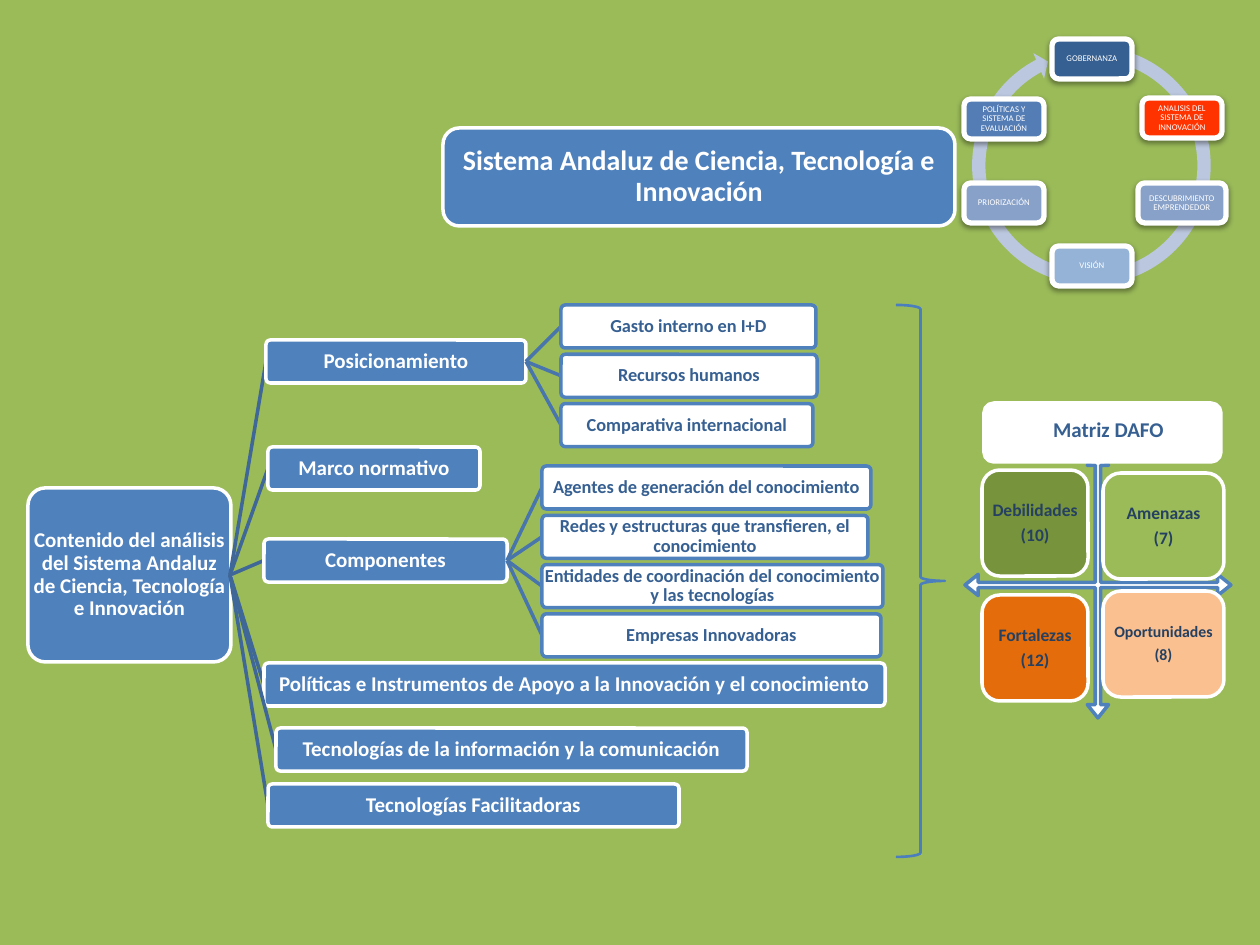
"""Build the slide on the analysis of the Andalusian innovation system."""
from dataclasses import dataclass

from lxml.etree import SubElement
from pptx import Presentation
from pptx.dml.color import RGBColor
from pptx.enum.shapes import MSO_CONNECTOR, MSO_SHAPE
from pptx.enum.text import MSO_ANCHOR, MSO_AUTO_SIZE, PP_ALIGN
from pptx.oxml.ns import qn
from pptx.util import Pt


@dataclass(frozen=True)
class Theme:
    font: str = "Calibri"
    ground: str = "9BBB59"
    white: str = "FFFFFF"
    blue: str = "4F81BD"
    navy: str = "376092"
    ink: str = "254061"
    ring: str = "BBC7DE"
    trunk: str = "3F6797"
    twig: str = "4875AC"
    brace: str = "4B7EBC"
    title: float = 16
    branch: float = 12
    leaf: float = 10.5
    cell: float = 10
    node: float = 5


T = Theme()
SCALE = 914400 / 126
ROW_H, LEAF_STEP = 43, 49.3

TITLE = "Sistema Andaluz de Ciencia, Tecnología e Innovación"
TITLE_BOX = (443, 128, 512, 98)
ROOT = "Contenido del análisis del Sistema Andaluz de Ciencia, Tecnología e Innovación"
ROOT_BOX = (28, 488, 203, 174)

CYCLE = [
    ("GOBERNANZA", 1052, 39, 80, T.navy),
    ("ANALISIS DEL SISTEMA DE INNOVACIÓN", 1142, 98, 80, "FF3300"),
    ("DESCUBRIMIENTO EMPRENDEDOR", 1138, 183, 88, "88A1C9"),
    ("VISIÓN", 1052, 246, 80, "95B3D7"),
    ("PRIORIZACIÓN", 964, 183, 80, "88A1C9"),
    ("POLÍTICAS Y SISTEMA DE EVALUACIÓN", 964, 99, 80, "547DB6"),
]

BRANCHES = [
    ("Posicionamiento", 266, 340, 260, (561, 305), [
        ("Gasto interno en I+D", 255),
        ("Recursos humanos", 256),
        ("Comparativa internacional", 252)]),
    ("Marco normativo", 268, 447, 212, None, []),
    ("Componentes", 264, 539, 243, (542, 466), [
        ("Agentes de generación del conocimiento", 329),
        ("Redes y estructuras que transfieren, el conocimiento", 326),
        ("Entidades de coordinación del conocimiento y las tecnologías", 341),
        ("Empresas Innovadoras", 339)]),
    ("Políticas e Instrumentos de Apoyo a la Innovación y el conocimiento",
     264, 663, 621, None, []),
    ("Tecnologías de la información y la comunicación", 276, 728, 471, None, []),
    ("Tecnologías Facilitadoras", 268, 784, 411, None, []),
]

DAFO = [
    ("Debilidades\n(10)", 982, 470, 106, "77933C", T.cell),
    ("Amenazas\n(7)", 1103, 473, 121, T.ground, T.cell),
    ("Fortalezas\n(12)", 982, 595, 106, "E46C0A", T.cell),
    ("Oportunidades\n(8)", 1103, 591, 121, "FAC090", 9),
]


def px(*values):
    return [round(v * SCALE) for v in values]


def rgb(code):
    return RGBColor.from_string(code)


def write(sp, text, size=T.branch, color=T.white, bold=True, inset=0):
    tf = sp.text_frame
    tf.word_wrap = True
    tf.auto_size = MSO_AUTO_SIZE.NONE
    tf.vertical_anchor = MSO_ANCHOR.MIDDLE
    tf.margin_left = tf.margin_right = tf.margin_top = tf.margin_bottom = px(inset)[0]
    tf.text = text
    for p in tf.paragraphs:
        p.alignment = PP_ALIGN.CENTER
        p.line_spacing = 0.9
        p.space_before = Pt(0)
        p.space_after = Pt(size * 0.35)
        for r in p.runs:
            r.font.name, r.font.size, r.font.bold = T.font, Pt(size), bold
            r.font.color.rgb = rgb(color)


def draw(s, kind, box, fill=None, line=None, width=2, adj=()):
    sp = s.shapes.add_shape(kind, *px(*box))
    sp.shadow.inherit = False
    for i, value in enumerate(adj):
        sp.adjustments[i] = value
    if fill:
        sp.fill.solid()
        sp.fill.fore_color.rgb = rgb(fill)
    else:
        sp.fill.background()
    if line:
        sp.line.color.rgb = rgb(line)
        sp.line.width = Pt(width)
    else:
        sp.line.fill.background()
    return sp


def rounded(s, box, fill, line=T.white, width=2, adj=()):
    return draw(s, MSO_SHAPE.ROUNDED_RECTANGLE, box, fill, line, width, adj)


def link(s, start, end, color):
    c = s.shapes.add_connector(MSO_CONNECTOR.STRAIGHT, *px(*start, *end))
    c.line.color.rgb = rgb(color)
    c.line.width = Pt(2)
    SubElement(c._element.spPr, qn("a:effectLst"))


def cast_shadow(sp):
    effects = sp._element.spPr.find(qn("a:effectLst"))
    outer = SubElement(effects, qn("a:outerShdw"), blurRad=str(Pt(3.1)),
                       dist=str(Pt(1.6)), dir="5400000", rotWithShape="0")
    color = SubElement(outer, qn("a:srgbClr"), val="000000")
    SubElement(color, qn("a:alpha"), val="38000")


def add_cycle(s):
    draw(s, MSO_SHAPE.CIRCULAR_ARROW, (965, 39, 253, 253), T.ring,
         adj=(0.05274, 3.126, 145.257, 169.549, 0.05477))
    for text, x, y, w, fill in CYCLE:
        sp = rounded(s, (x, y, w, 40), fill, width=3)
        cast_shadow(sp)
        write(sp, text, size=T.node, bold=False, inset=2)


def add_title(s):
    rounded(s, TITLE_BOX, T.blue)
    title = s.shapes.title
    title.left, title.top, title.width, title.height = px(*TITLE_BOX)
    write(title, TITLE, size=T.title, inset=14)
    s.shapes._spTree.append(title._element)


def add_tree(s):
    x, y, w, h = ROOT_BOX
    write(rounded(s, ROOT_BOX, T.blue, adj=[0.1]), ROOT)
    for text, bx, by, bw, origin, leaves in BRANCHES:
        mid = by + ROW_H / 2
        link(s, (x + w - 1, y + h / 2), (bx, mid), T.trunk)
        write(rounded(s, (bx, by, bw, ROW_H), T.blue, adj=[0.1]), text)
        for i, (leaf, lw) in enumerate(leaves):
            lx, ly = origin[0], origin[1] + i * LEAF_STEP
            link(s, (bx + bw, mid), (lx, ly + ROW_H / 2), T.twig)
            sp = rounded(s, (lx, ly, lw, ROW_H), T.white, T.blue, adj=[0.1])
            write(sp, leaf, size=T.leaf, color=T.navy)


def add_matrix(s):
    draw(s, MSO_SHAPE.QUAD_ARROW, (965, 452, 266, 266), T.white, T.blue,
         adj=(0.02, 0.04, 0.05))
    for text, x, y, w, fill, size in DAFO:
        write(rounded(s, (x, y, w, 106), fill), text, size=size, color=T.ink)
    rounded(s, (984, 403, 237, 59), T.white)
    label = s.shapes.add_textbox(*px(1002, 413, 213, 35))
    write(label, "Matriz DAFO", color=T.navy)


def main():
    prs = Presentation()
    prs.slide_width, prs.slide_height = px(1260, 945)
    s = prs.slides.add_slide(prs.slide_layouts[5])
    s.background.fill.solid()
    s.background.fill.fore_color.rgb = rgb(T.ground)
    add_cycle(s)
    add_title(s)
    add_tree(s)
    draw(s, MSO_SHAPE.RIGHT_BRACE, (896, 305, 49, 552), line=T.brace, width=1.5)
    add_matrix(s)
    prs.save("out.pptx")


if __name__ == "__main__":
    main()
